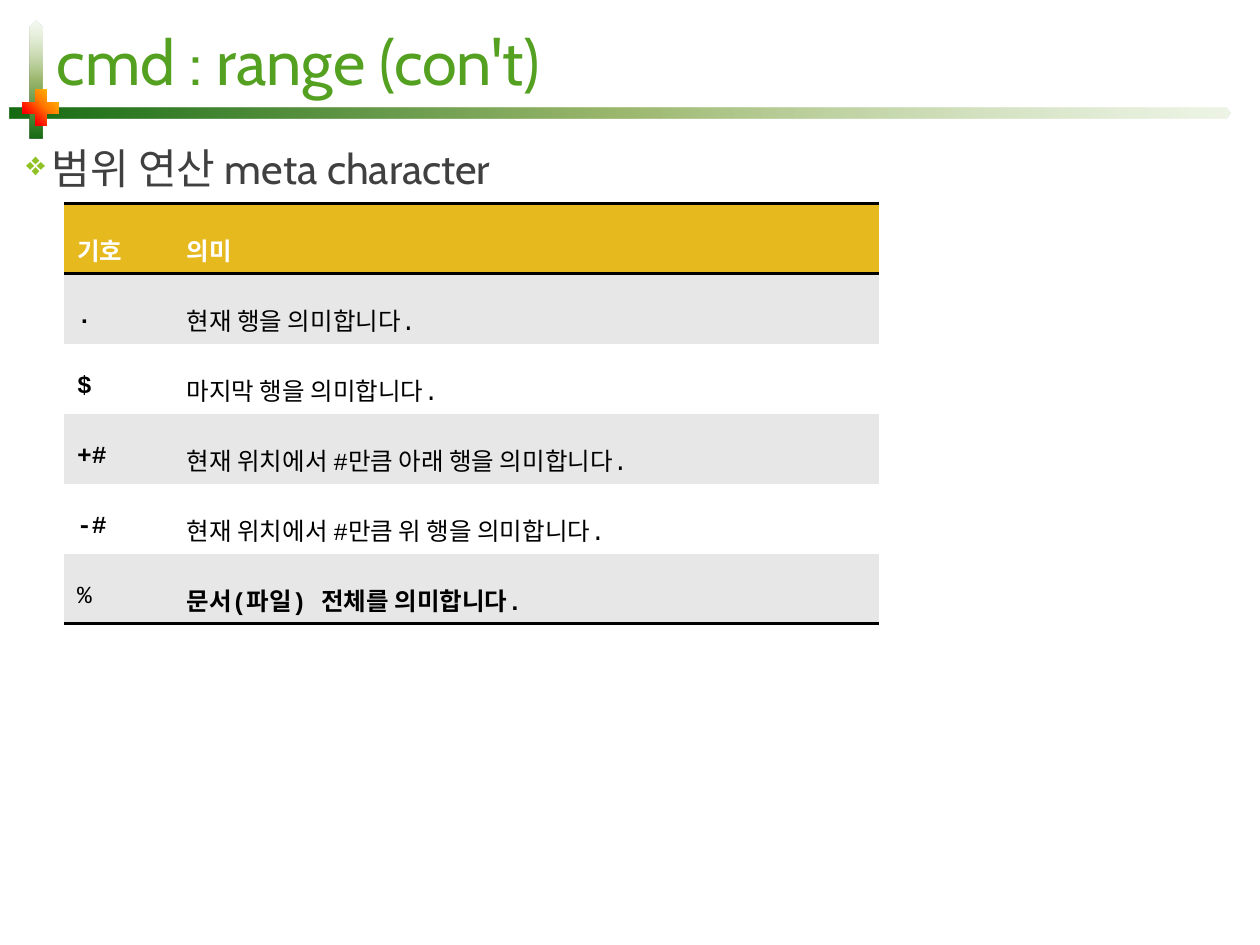
from dataclasses import dataclass

from lxml import etree
from pptx import Presentation
from pptx.dml.color import RGBColor
from pptx.enum.shapes import MSO_SHAPE
from pptx.enum.text import MSO_ANCHOR, MSO_AUTO_SIZE, PP_ALIGN
from pptx.oxml.ns import qn
from pptx.util import Cm, Pt

PENTAGON = MSO_SHAPE.PENTAGON
PLUS = MSO_SHAPE.MATH_PLUS
MIDDLE = MSO_ANCHOR.MIDDLE
LEFT = PP_ALIGN.LEFT
NO_AUTOFIT = MSO_AUTO_SIZE.NONE
TITLE_ONLY = 5


@dataclass(frozen=True)
class Theme:
    heading_font: str = "Cabin"
    table_font: str = "Courier New"
    title_size: int = 36
    body_size: int = 24
    table_size: int = 14
    title: str = "54A021"
    body: str = "404040"
    bullet: str = "90C226"
    header_fill: str = "E6B91E"
    header_text: str = "FFFFFF"
    band: str = "E7E7E7"
    plain: str = "FFFFFF"
    ink: str = "000000"
    bar: tuple = ((0, "DDEBCF", 50), (50, "9CB86E", 100), (100, "156B13", 100))
    post: tuple = ((0, "DDEBCF", 30), (50, "9CB86E", 100), (100, "156B13", 100))
    cross: tuple = ((0, "FFF200", 100), (45, "FF7A00", 100),
                    (70, "FF0300", 100), (100, "4D0808", 100))


def add_node(parent, tag, **attributes):
    node = etree.SubElement(parent, qn(tag))
    for name, value in attributes.items():
        node.set(name, str(value))
    return node


class SlideBuilder:
    def __init__(self, deck, theme):
        self.theme = theme
        self.slide = deck.slides.add_slide(deck.slide_layouts[TITLE_ONLY])

    def style(self, paragraph, font, size, color, bold=False):
        paragraph.alignment = LEFT
        paragraph.font.name = font
        paragraph.font.size = Pt(size)
        paragraph.font.bold = bold
        paragraph.font.color.rgb = RGBColor.from_string(color)

    def title(self, text, left, top, width, height):
        box = self.slide.shapes.title
        box.left, box.top, box.width, box.height = map(Cm, (left, top, width, height))
        frame = box.text_frame
        frame.text = text
        frame.auto_size = NO_AUTOFIT
        frame.vertical_anchor = MIDDLE
        self.style(frame.paragraphs[0], self.theme.heading_font,
                   self.theme.title_size, self.theme.title)

    def ornament(self, kind, left, top, width, height, stops, angle, rotation=0):
        shape = self.slide.shapes.add_shape(kind, Cm(left), Cm(top), Cm(width), Cm(height))
        shape.shadow.inherit = False
        shape.line.fill.background()
        shape.rotation = rotation
        shape.fill.gradient()
        gradient = shape.element.spPr.find(qn("a:gradFill"))
        for child in list(gradient):
            gradient.remove(child)
        stop_list = add_node(gradient, "a:gsLst")
        for position, color, opacity in stops:
            stop = add_node(stop_list, "a:gs", pos=position * 1000)
            tint = add_node(stop, "a:srgbClr", val=color)
            if opacity < 100:
                add_node(tint, "a:alpha", val=opacity * 1000)
        add_node(gradient, "a:lin", ang=angle * 60000, scaled=0)

    def bullet(self, text, left, top, width, height):
        box = self.slide.shapes.add_textbox(Cm(left), Cm(top), Cm(width), Cm(height))
        frame = box.text_frame
        frame.word_wrap = True
        paragraph = frame.paragraphs[0]
        paragraph.text = text
        paragraph.space_before = Pt(10)
        self.style(paragraph, self.theme.heading_font, self.theme.body_size, self.theme.body)
        properties = paragraph._p.get_or_add_pPr()
        properties.set("marL", str(Cm(0.51)))
        properties.set("indent", str(Cm(-0.97)))
        marks = etree.Element("marks")
        add_node(add_node(marks, "a:buClr"), "a:srgbClr", val=self.theme.bullet)
        add_node(marks, "a:buSzPct", val=80000)
        add_node(marks, "a:buChar", char="❖")
        spot = properties.index(properties.find(qn("a:defRPr")))
        properties[spot:spot] = list(marks)

    def borders(self, cell, ruled_sides):
        properties = cell._tc.get_or_add_tcPr()
        for index, side in enumerate(("L", "R", "T", "B")):
            line = add_node(properties, f"a:ln{side}", w=Pt(2))
            if side in ruled_sides:
                add_node(add_node(line, "a:solidFill"), "a:srgbClr", val=self.theme.ink)
            else:
                add_node(line, "a:noFill")
            properties.insert(index, line)

    def table(self, rows, left, top, widths, row_height):
        theme = self.theme
        frame = self.slide.shapes.add_table(
            len(rows), len(widths), Cm(left), Cm(top),
            Cm(sum(widths)), Cm(row_height * len(rows)))
        grid = frame.table
        grid.horz_banding = False
        for column, width in zip(grid.columns, widths):
            column.width = Cm(width)
        last = len(rows) - 1
        for row_index, (row, values) in enumerate(zip(grid.rows, rows)):
            row.height = Cm(row_height)
            header = row_index == 0
            fill = theme.header_fill if header else (theme.plain, theme.band)[row_index % 2]
            color = theme.header_text if header else theme.ink
            sides = {0: "TB", 1: "T", last: "B"}.get(row_index, "")
            for column_index, (cell, value) in enumerate(zip(row.cells, values)):
                cell.fill.solid()
                cell.fill.fore_color.rgb = RGBColor.from_string(fill)
                cell.vertical_anchor = MIDDLE
                cell.text = value
                paragraph = cell.text_frame.paragraphs[0]
                paragraph.line_spacing = 1.6
                bold = header or (column_index == 0) != (row_index == last)
                self.style(paragraph, theme.table_font, theme.table_size, color, bold)
                self.borders(cell, sides)


def main():
    deck = Presentation()
    deck.slide_width, deck.slide_height = Cm(25.4), Cm(19.05)
    theme = Theme()
    page = SlideBuilder(deck, theme)
    page.ornament(PENTAGON, 0.2, 2.18, 24.61, 0.2, theme.bar, 180)
    page.ornament(PENTAGON, -0.46, 1.47, 2.36, 0.26, theme.post, 180, 270)
    page.ornament(PLUS, 0.33, 1.68, 0.99, 0.99, theme.cross, 135)
    page.title("cmd : range (con't)", 0.89, 0.25, 23.9, 1.93)
    page.bullet("범위 연산 meta character", 0.28, 2.74, 24.54, 12.19)
    page.table([
        ("기호", "의미"),
        (".", "현재 행을 의미합니다."),
        ("$", "마지막 행을 의미합니다."),
        ("+#", "현재 위치에서 #만큼 아래 행을 의미합니다."),
        ("-#", "현재 위치에서 #만큼 위 행을 의미합니다."),
        ("%", "문서(파일) 전체를 의미합니다."),
    ], 1.3, 4.11, (2.21, 14.2), 1.41)
    deck.save("out.pptx")


if __name__ == "__main__":
    main()
